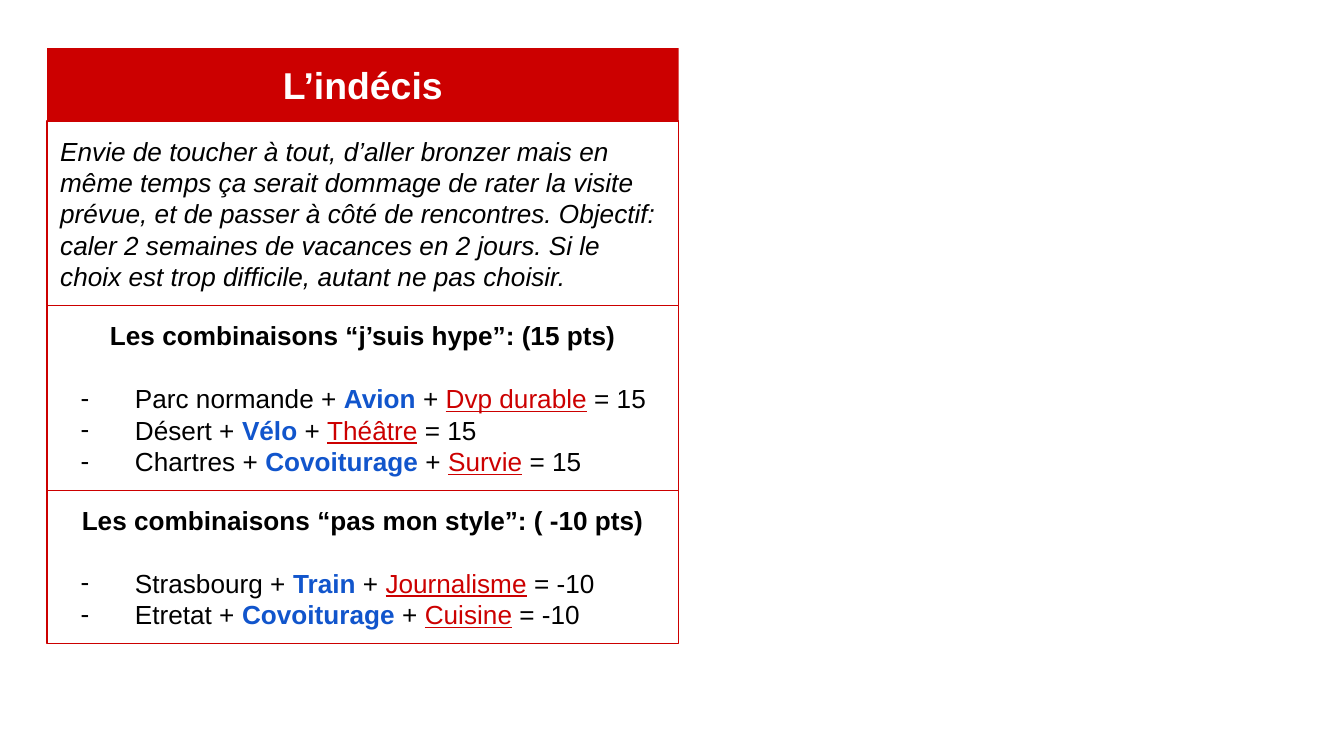
from lxml.etree import SubElement
from pptx import Presentation
from pptx.dml.color import RGBColor
from pptx.enum.shapes import MSO_SHAPE
from pptx.enum.text import MSO_ANCHOR, MSO_AUTO_SIZE, PP_ALIGN
from pptx.oxml.ns import qn
from pptx.util import Pt

COLORS = {"red": "CC0000", "blue": "1155CC", "black": "000000", "white": "FFFFFF"}
LINE_HEIGHT = Pt(16.8)
CARD = {"left": 25.2, "top": 25.8, "width": 338.4}
HEIGHTS = {"title": 39, "description": 99, "liked": 99, "disliked": 82}

DESCRIPTION = (
    "Envie de toucher à tout, d’aller bronzer mais en même temps ça serait dommage "
    "de rater la visite prévue, et de passer à côté de rencontres. Objectif: caler "
    "2 semaines de vacances en 2 jours. Si le choix est trop difficile, autant ne "
    "pas choisir."
)
LIKED = [
    ("Parc normande", "Avion", "Dvp durable", "15"),
    ("Désert", "Vélo", "Théâtre", "15"),
    ("Chartres", "Covoiturage", "Survie", "15"),
]
DISLIKED = [
    ("Strasbourg", "Train", "Journalisme", "-10"),
    ("Etretat", "Covoiturage", "Cuisine", "-10"),
]


def color(name):
    return RGBColor.from_string(COLORS[name])


def set_attributes(target, values):
    for name, value in values.items():
        setattr(target, name, value)


def format_box(box, area, fill, outline=None):
    for name, value in zip(("left", "top", "width", "height"), area):
        setattr(box, name, Pt(value))
    box.fill.solid()
    box.fill.fore_color.rgb = color(fill)
    if outline:
        box.line.color.rgb = color(outline)
        box.line.width = Pt(0.75)
    else:
        box.line.fill.background()
    margins = {f"margin_{side}": Pt(7.2) for side in ("left", "top", "right", "bottom")}
    set_attributes(box.text_frame, {
        "word_wrap": True,
        "auto_size": MSO_AUTO_SIZE.NONE,
        "vertical_anchor": MSO_ANCHOR.MIDDLE,
        **margins,
    })


def add_span(para, text, ink="black", size=14, **style):
    span = para.add_run()
    span.text = text
    set_attributes(span.font, {"name": "Arial", "size": Pt(size), **style})
    span.font.color.rgb = color(ink)


def format_para(para, align=PP_ALIGN.LEFT, after=0):
    set_attributes(para, {
        "alignment": align,
        "line_spacing": LINE_HEIGHT,
        "space_before": Pt(0),
        "space_after": after,
    })


def set_bullet(para, mark=None):
    properties = para._p.get_or_add_pPr()
    properties.set("marL", str(Pt(36) if mark else 0))
    properties.set("indent", str(Pt(-25.2) if mark else 0))
    if mark:
        bullet_color = SubElement(properties, qn("a:buClr"))
        SubElement(bullet_color, qn("a:srgbClr"), val=COLORS["black"])
        SubElement(properties, qn("a:buChar"), char=mark)
    else:
        SubElement(properties, qn("a:buNone"))


def place_title(box, area, text):
    format_box(box, area, "red")
    para = box.text_frame.paragraphs[0]
    para.alignment = PP_ALIGN.CENTER
    add_span(para, text, "white", size=20, bold=True)


def place_description(page, area, text):
    box = page.shapes.add_shape(MSO_SHAPE.RECTANGLE, *map(Pt, area))
    box.shadow.inherit = False
    format_box(box, area, "white", "red")
    para = box.text_frame.paragraphs[0]
    format_para(para)
    add_span(para, text, italic=True)


def place_combinations(box, area, heading, combinations):
    format_box(box, area, "white", "red")
    para = box.text_frame.paragraphs[0]
    format_para(para, PP_ALIGN.CENTER, after=LINE_HEIGHT)
    set_bullet(para)
    add_span(para, heading, bold=True)
    for place, transport, theme, score in combinations:
        para = box.text_frame.add_paragraph()
        format_para(para)
        set_bullet(para, "-")
        add_span(para, f" {place} + ")
        add_span(para, transport, "blue", bold=True)
        add_span(para, " + ")
        add_span(para, theme, "red", underline=True)
        add_span(para, f" = {score}")


def stack_areas():
    areas, top = {}, CARD["top"]
    for name, height in HEIGHTS.items():
        areas[name] = (CARD["left"], top, CARD["width"], height)
        top += height
    return areas


def main():
    deck = Presentation()
    set_attributes(deck, {"slide_width": Pt(720), "slide_height": Pt(405)})
    page = deck.slides.add_slide(deck.slide_layouts.get_by_name("Two Content"))
    title, liked, disliked = page.placeholders
    areas = stack_areas()
    place_title(title, areas["title"], "L’indécis")
    place_description(page, areas["description"], DESCRIPTION)
    place_combinations(liked, areas["liked"],
                       "Les combinaisons “j’suis hype”: (15 pts)", LIKED)
    place_combinations(disliked, areas["disliked"],
                       "Les combinaisons “pas mon style”: ( -10 pts)", DISLIKED)
    deck.save("out.pptx")


if __name__ == "__main__":
    main()
